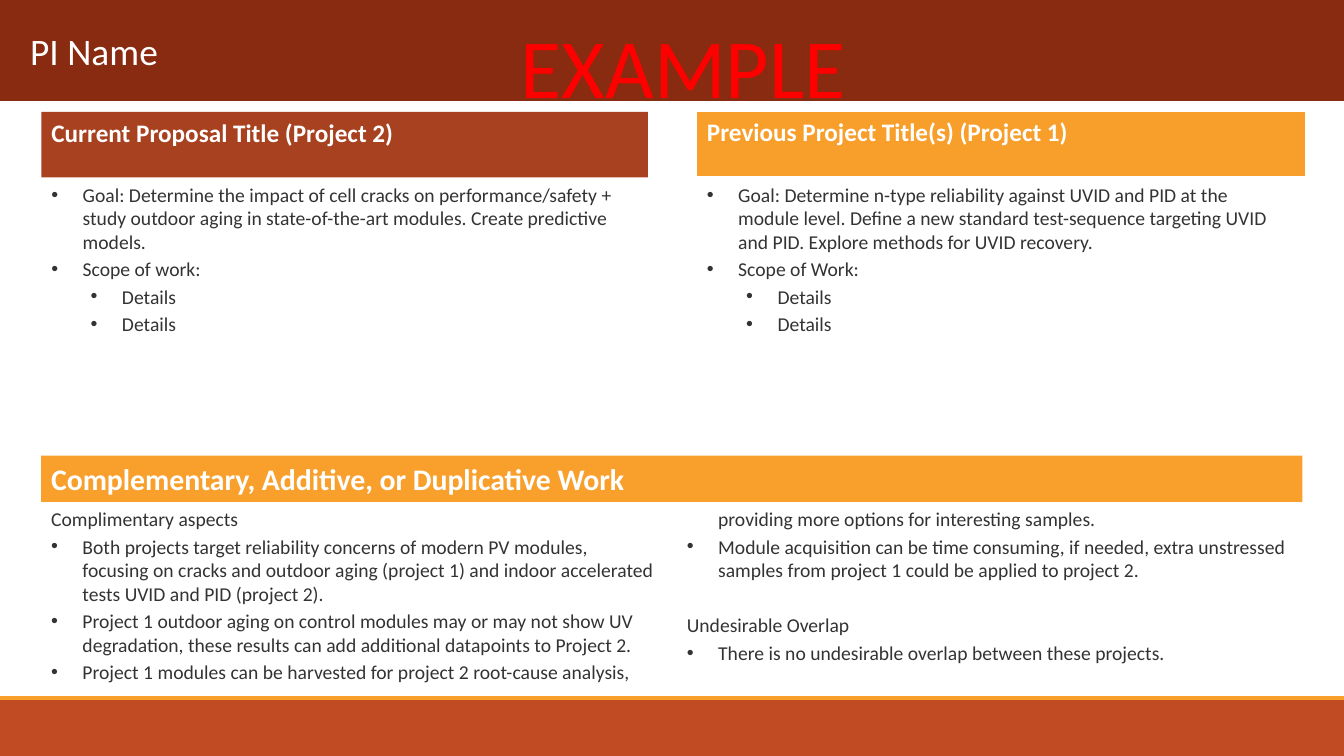
import pptx
import pptx.util
import pptx.dml.color
import pptx.enum.shapes
import pptx.enum.text
import lxml.etree

Cm, Pt = pptx.util.Cm, pptx.util.Pt
RGB = pptx.dml.color.RGBColor.from_string
Anchor = pptx.enum.text.MSO_ANCHOR
Fit = pptx.enum.text.MSO_AUTO_SIZE
Kind = pptx.enum.shapes.MSO_SHAPE
HUES = {"dark": "882B10", "rust": "A8411F", "foot": "C14B23", "gold": "F9A02C",
        "amber": "F79E2B", "ink": "333333", "white": "FFFFFF", "red": "FF0000"}
EDGE, WIDE = 1.04, 33.87


def place(item, left, top, width, height):
    item.left, item.top, item.width, item.height = map(Cm, (left, top, width, height))


def write(frame, rows, size, hue, bold=False):
    """Fill a frame with (level, text) rows; level None means no bullet."""
    frame.word_wrap = True
    frame.auto_size = Fit.NONE
    for spot, (level, text) in enumerate(rows):
        para = frame.paragraphs[0] if spot == 0 else frame.add_paragraph()
        para.alignment = pptx.enum.text.PP_ALIGN.LEFT
        gap = 0.2 * size
        if spot and level is None:
            gap = 1.62 * size  # one open line above a new group
        para.space_before = Pt(round(gap, 1) if spot else 0)
        if level is not None:
            para.level = level
            props = para._p.get_or_add_pPr()
            props.set("marL", str(Cm(0.79 + 0.99 * level)))
            props.set("indent", str(-Cm(0.79)))
            space = "{%s}" % props.nsmap["a"]
            lxml.etree.SubElement(props, space + "buFont", typeface="Arial")
            lxml.etree.SubElement(props, space + "buChar", char="•")
        run = para.add_run()
        run.text = text
        run.font.name, run.font.size, run.font.bold = "Calibri", Pt(size), bold
        run.font.color.rgb = RGB(HUES[hue])


deck = pptx.Presentation()
deck.slide_width, deck.slide_height = Cm(WIDE), Cm(19.05)
slide = deck.slides.add_slide(deck.slide_layouts.get_by_name("Comparison"))
holds = {item.placeholder_format.idx: item for item in slide.placeholders}

# Footer band and section bar
bars = []
for hue, box in (("foot", (0, 17.58, WIDE, 1.47)), ("gold", (EDGE, 11.48, 31.78, 1.17))):
    bar = slide.shapes.add_shape(Kind.RECTANGLE, *map(Cm, box))
    bar.shadow.inherit = False
    bar.fill.solid()
    bar.fill.fore_color.rgb = RGB(HUES[hue])
    bar.line.fill.background()
    bars.append(bar)
bars[1].text_frame.vertical_anchor = Anchor.TOP
write(bars[1].text_frame, [(None, "Complementary, Additive, or Duplicative Work")],
      21.3, "white", True)

# Gold rule above the footer
rule = slide.shapes.add_connector(pptx.enum.shapes.MSO_CONNECTOR.STRAIGHT,
                                  0, Cm(17.58), Cm(WIDE), Cm(17.58))
rule.line.color.rgb = RGB(HUES["gold"])
rule.line.width = Pt(2.75)
props = rule._element.spPr
lxml.etree.SubElement(props, "{%s}effectLst" % props.nsmap["a"])

# Title band
title = slide.shapes.title
place(title, 0, 0, WIDE, 2.54)
title.fill.solid()
title.fill.fore_color.rgb = RGB(HUES["dark"])
frame = title.text_frame
frame.margin_left = frame.margin_right = Cm(0.76)
frame.vertical_anchor = Anchor.MIDDLE
write(frame, [(None, "PI Name")], 26.7, "white")

# Two project columns: heading above a list
parts = [
    (1, EDGE, 2.82, 15.29, "rust", "Current Proposal Title (Project 2)",
     ["Goal: Determine the impact of cell cracks on performance/safety + study outdoor "
      "aging in state-of-the-art modules. Create predictive models.", "Scope of work:"]),
    (3, 17.56, 2.81, 15.33, "amber", "Previous Project Title(s) (Project 1)",
     ["Goal: Determine n-type reliability against UVID and PID at the module level. "
      "Define a new standard test-sequence targeting UVID and PID. "
      "Explore methods for UVID recovery.", "Scope of Work:"]),
]
for idx, left, top, width, hue, name, goals in parts:
    head, body = holds[idx], holds[idx + 1]
    place(head, left, top, width, 1.65)
    head.fill.solid()
    head.fill.fore_color.rgb = RGB(HUES[hue])
    head.text_frame.vertical_anchor = Anchor.TOP
    write(head.text_frame, [(None, name)], 18, "white", True)
    place(body, left, 4.47, 15.27, 6.58)
    write(body.text_frame, [(0, goal) for goal in goals] + [(1, "Details")] * 2, 14, "ink")
holds[3].line.color.rgb = RGB(HUES["white"])
holds[3].line.width = Pt(0.75)

# Overlap notes, flowing in two columns
notes = slide.shapes.add_textbox(Cm(EDGE), Cm(12.65), Cm(31.78), Cm(4.52))
write(notes.text_frame, [
    (None, "Complimentary aspects"),
    (0, "Both projects target reliability concerns of modern PV modules, focusing on cracks "
        "and outdoor aging (project 1) and indoor accelerated tests UVID and PID (project 2)."),
    (0, "Project 1 outdoor aging on control modules may or may not show UV degradation, "
        "these results can add additional datapoints to Project 2."),
    (0, "Project 1 modules can be harvested for project 2 root-cause analysis, "
        "providing more options for interesting samples."),
    (0, "Module acquisition can be time consuming, if needed, extra unstressed samples "
        "from project 1 could be applied to project 2."),
    (None, "Undesirable Overlap"),
    (0, "There is no undesirable overlap between these projects."),
], 14, "ink")
flow = notes.text_frame._txBody.bodyPr
flow.set("numCol", "2")
flow.set("spcCol", str(Cm(0.76)))

# Example mark
mark = slide.shapes.add_textbox(Cm(12.88), Cm(0.23), Cm(12.78), Cm(2.82))
write(mark.text_frame, [(None, "EXAMPLE")], 60, "red")

deck.save("out.pptx")
